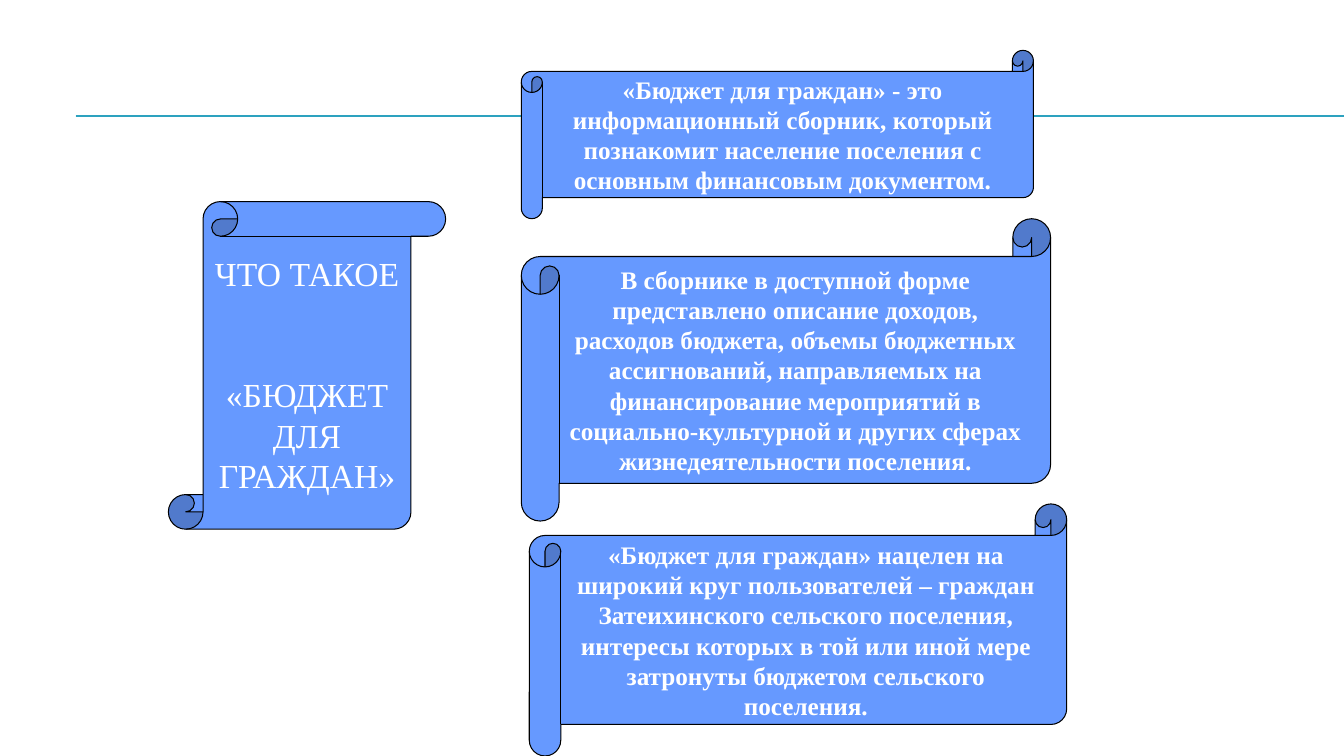
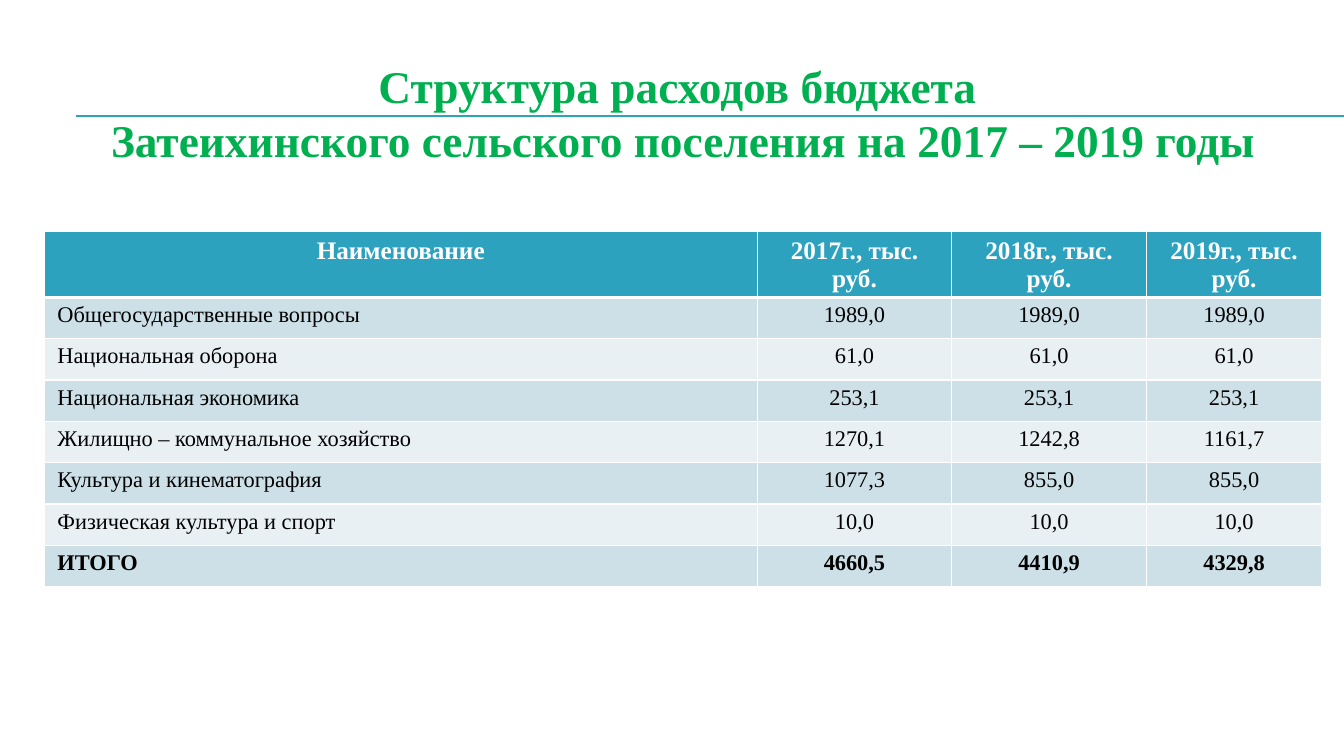
from dataclasses import dataclass

from lxml import etree
from pptx import Presentation
from pptx.dml.color import RGBColor
from pptx.enum.shapes import MSO_CONNECTOR, MSO_SHAPE
from pptx.enum.text import MSO_ANCHOR, PP_ALIGN
from pptx.oxml.ns import qn
from pptx.util import Inches, Pt

HORIZONTAL = MSO_SHAPE.HORIZONTAL_SCROLL
VERTICAL = MSO_SHAPE.VERTICAL_SCROLL
STRAIGHT = MSO_CONNECTOR.STRAIGHT
MIDDLE = MSO_ANCHOR.MIDDLE
CENTER, LEFT = PP_ALIGN.CENTER, PP_ALIGN.LEFT


# Theme
@dataclass(frozen=True)
class Theme:
    font: str = "Times New Roman"
    accent: str = "2DA2BF"
    title: str = "00B050"
    scroll: str = "6699FF"
    dark: str = "000000"
    light: str = "FFFFFF"
    bands: tuple = ("CDE0E8", "E8F0F4")
    title_size: float = 32.4
    question_size: int = 24
    text_size: int = 18
    cell_size: int = 16
    line_width: float = 0.75


THEME = Theme()
SLIDE_WIDTH, SLIDE_HEIGHT = 13.33, 7.5
RULE_LEFT, RULE_TOPS = 0.75, (1.15, 1.16)

# Content: preset, (left, top, width, height), size, bold, paragraphs, gap between them
SCROLLS = [
    (HORIZONTAL, (5.17, 0.5, 5.08, 1.67), THEME.text_size, True,
     ["«Бюджет для граждан» - это информационный сборник, который познакомит "
      "население поселения с основным финансовым документом."], 0),
    (HORIZONTAL, (5.17, 2.17, 5.25, 3), THEME.text_size, True,
     ["В сборнике в доступной форме представлено описание доходов, расходов бюджета, "
      "объемы бюджетных ассигнований, направляемых на финансирование мероприятий в "
      "социально-культурной и других сферах жизнедеятельности поселения."], 0),
    (HORIZONTAL, (5.25, 5, 5.33, 2.5), THEME.text_size, True,
     ["«Бюджет для граждан» нацелен на широкий круг пользователей – граждан "
      "Затеихинского сельского поселения, интересы которых в той или иной мере "
      "затронуты бюджетом сельского поселения."], 0),
    (VERTICAL, (1.67, 2, 2.75, 3.25), THEME.question_size, False,
     ["ЧТО ТАКОЕ", "«БЮДЖЕТ ДЛЯ ГРАЖДАН»"], 58),
]

TITLE_BOX = (0.44, 0.5, 12.67, 1.23)
TITLE_LINES = ["Структура расходов бюджета ",
               "Затеихинского сельского поселения на 2017 – 2019 годы"]

TABLE_LEFT, TABLE_TOP = 0.44, 2.3
COLUMN_WIDTHS = [7.07, 1.93, 1.93, 1.74]
HEADER_HEIGHT, ROW_HEIGHT = 0.64, 0.41
EXPENSES = [
    ("Наименование", "2017г., тыс. руб.", "2018г., тыс. руб.", "2019г., тыс. руб."),
    ("Общегосударственные вопросы", "1989,0", "1989,0", "1989,0"),
    ("Национальная оборона", "61,0", "61,0", "61,0"),
    ("Национальная экономика", "253,1", "253,1", "253,1"),
    ("Жилищно – коммунальное хозяйство", "1270,1", "1242,8", "1161,7"),
    ("Культура и кинематография", "1077,3", "855,0", "855,0"),
    ("Физическая культура и спорт", "10,0", "10,0", "10,0"),
    ("ИТОГО", "4660,5", "4410,9", "4329,8"),
]


# Shared helpers
def rgb(value):
    return RGBColor.from_string(value)


def inches(values):
    return [Inches(value) for value in values]


def add_run(paragraph, text, size, color, bold=False):
    run = paragraph.add_run()
    run.text = text
    run.font.name = THEME.font
    run.font.size = Pt(size)
    run.font.bold = bold
    run.font.color.rgb = rgb(color)


def new_slide(presentation):
    slide = presentation.slides.add_slide(presentation.slide_layouts[6])
    for top in RULE_TOPS:
        rule = slide.shapes.add_connector(
            STRAIGHT, *inches((RULE_LEFT, top, SLIDE_WIDTH, top)))
        rule.line.color.rgb = rgb(THEME.accent)
        rule.line.width = Pt(THEME.line_width)
        etree.SubElement(rule._element.spPr, qn("a:effectLst"))
    return slide


def add_scroll(slide, preset, box, size, bold, texts, gap):
    shape = slide.shapes.add_shape(preset, *inches(box))
    shape.shadow.inherit = False
    shape.fill.solid()
    shape.fill.fore_color.rgb = rgb(THEME.scroll)
    shape.line.color.rgb = rgb(THEME.dark)
    shape.line.width = Pt(THEME.line_width)
    frame = shape.text_frame
    frame.word_wrap = True
    frame.vertical_anchor = MIDDLE
    for index, text in enumerate(texts):
        paragraph = frame.add_paragraph() if index else frame.paragraphs[0]
        paragraph.alignment = CENTER
        paragraph.space_before = Pt(gap if index else 0)
        add_run(paragraph, text, size, THEME.light, bold)


def add_title(slide, lines):
    frame = slide.shapes.add_textbox(*inches(TITLE_BOX)).text_frame
    frame.word_wrap = True
    frame.vertical_anchor = MIDDLE
    paragraph = frame.paragraphs[0]
    paragraph.alignment = CENTER
    for index, line in enumerate(lines):
        if index:
            paragraph.add_line_break()
        add_run(paragraph, line, THEME.title_size, THEME.title, bold=True)


def set_borders(cell, widths):
    properties = cell._tc.get_or_add_tcPr()
    for position, (side, width) in enumerate(widths.items()):
        border = etree.Element(qn(f"a:ln{side}"), w=str(Pt(width)))
        fill = etree.SubElement(border, qn("a:solidFill"))
        etree.SubElement(fill, qn("a:srgbClr"), val=THEME.light)
        properties.insert(position, border)


def add_expense_table(slide, rows):
    heights = [HEADER_HEIGHT] + [ROW_HEIGHT] * (len(rows) - 1)
    box = (TABLE_LEFT, TABLE_TOP, sum(COLUMN_WIDTHS), sum(heights))
    table = slide.shapes.add_table(len(rows), len(COLUMN_WIDTHS), *inches(box)).table
    for column, width in zip(table.columns, COLUMN_WIDTHS):
        column.width = Inches(width)
    for row_index, values in enumerate(rows):
        table.rows[row_index].height = Inches(heights[row_index])
        header = row_index == 0
        bold = header or row_index == len(rows) - 1
        fill = THEME.accent if header else THEME.bands[(row_index - 1) % 2]
        color = THEME.light if header else THEME.dark
        size = THEME.text_size if header else THEME.cell_size
        borders = {"L": 1, "R": 1, "T": 3 if row_index == 1 else 1, "B": 3 if header else 1}
        for column_index, value in enumerate(values):
            cell = table.cell(row_index, column_index)
            cell.margin_left = cell.margin_right = Inches(0.13)
            cell.margin_top = Inches(0.05)
            cell.margin_bottom = Inches(0 if header else 0.05)
            cell.fill.solid()
            cell.fill.fore_color.rgb = rgb(fill)
            set_borders(cell, borders)
            paragraph = cell.text_frame.paragraphs[0]
            paragraph.alignment = CENTER if header or column_index else LEFT
            add_run(paragraph, value, size, color, bold)


def main():
    presentation = Presentation()
    presentation.slide_width = Inches(SLIDE_WIDTH)
    presentation.slide_height = Inches(SLIDE_HEIGHT)

    # What the collection is
    slide = new_slide(presentation)
    for scroll in SCROLLS:
        add_scroll(slide, *scroll)

    # Expense structure
    slide = new_slide(presentation)
    add_title(slide, TITLE_LINES)
    add_expense_table(slide, EXPENSES)

    presentation.save("out.pptx")


if __name__ == "__main__":
    main()
